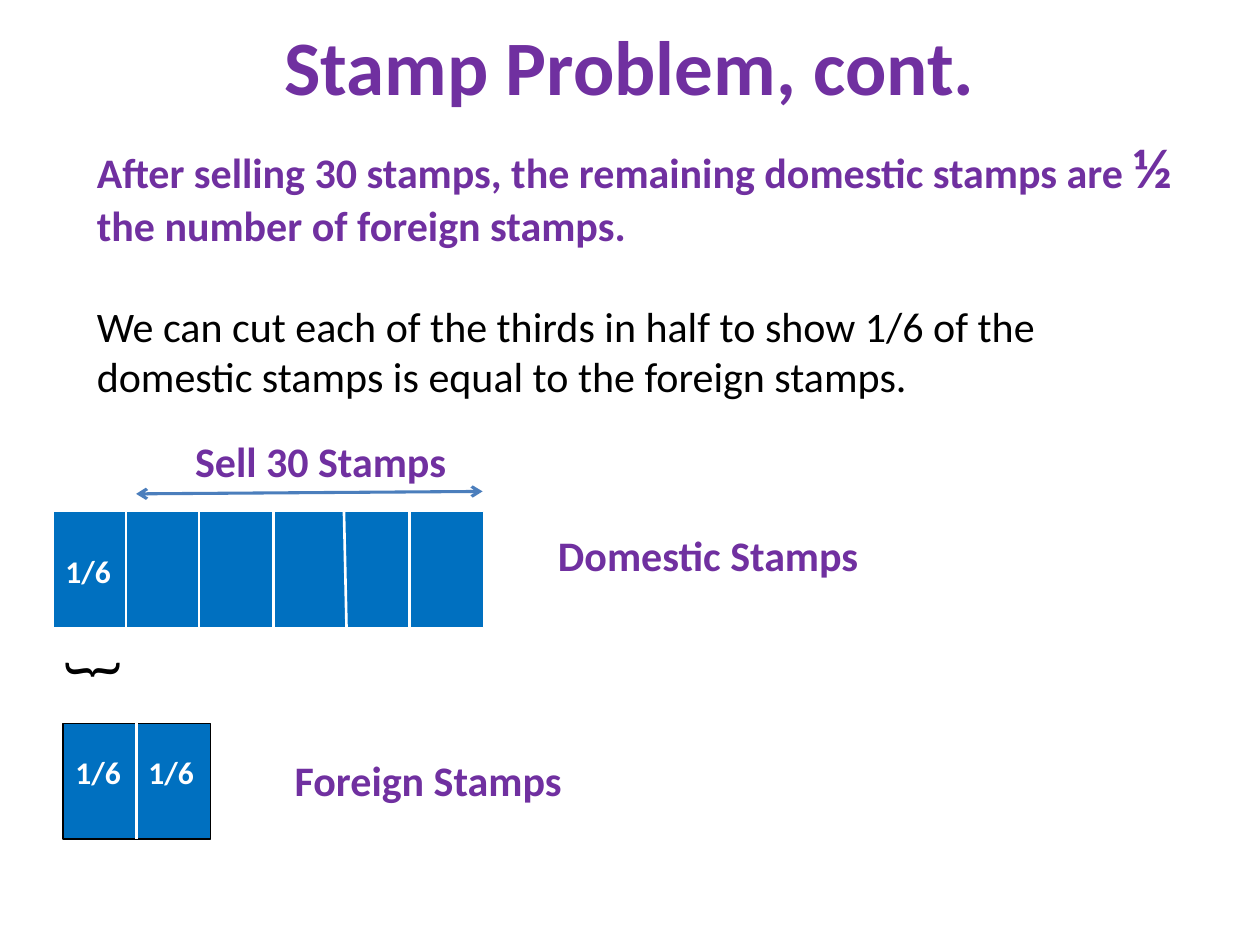
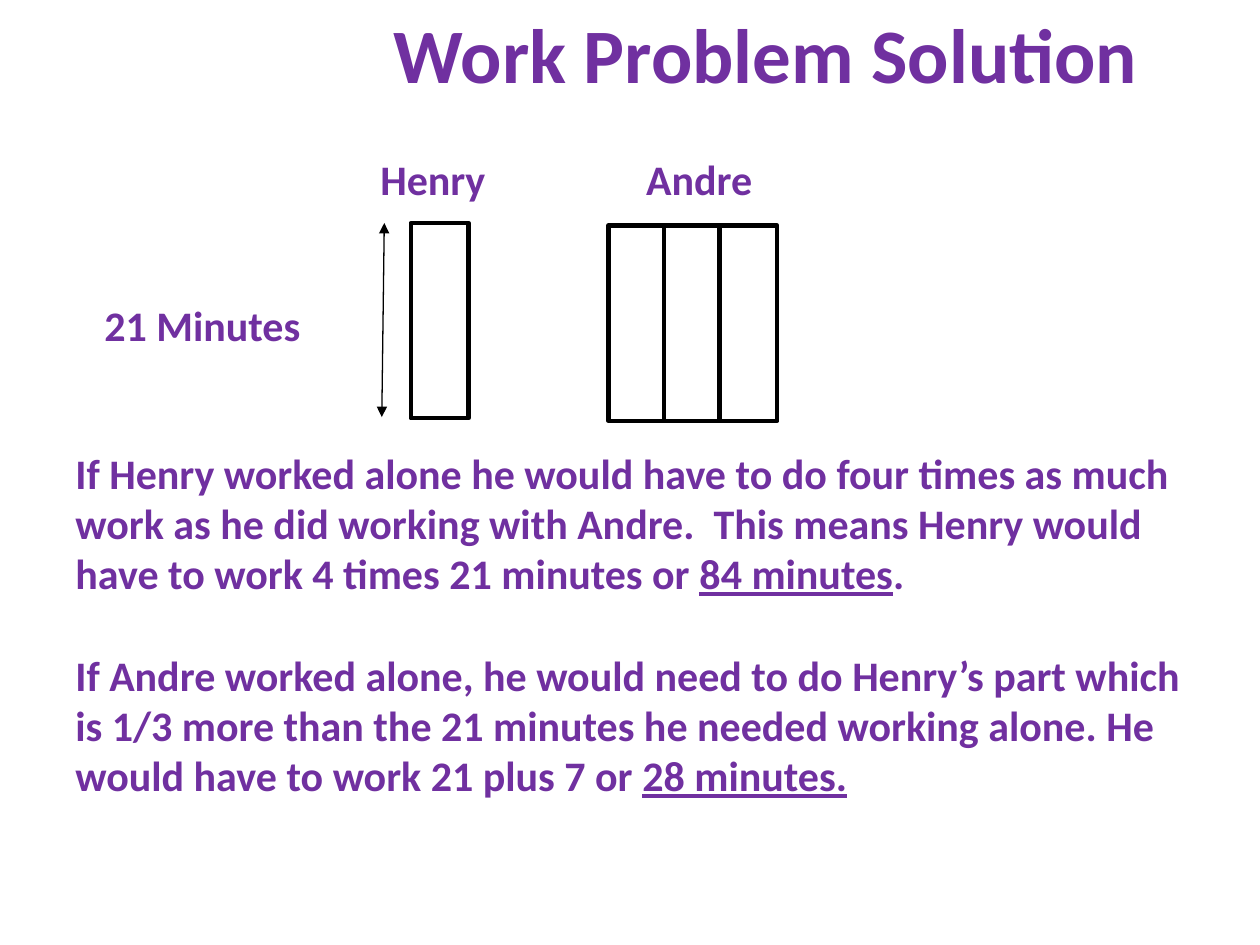
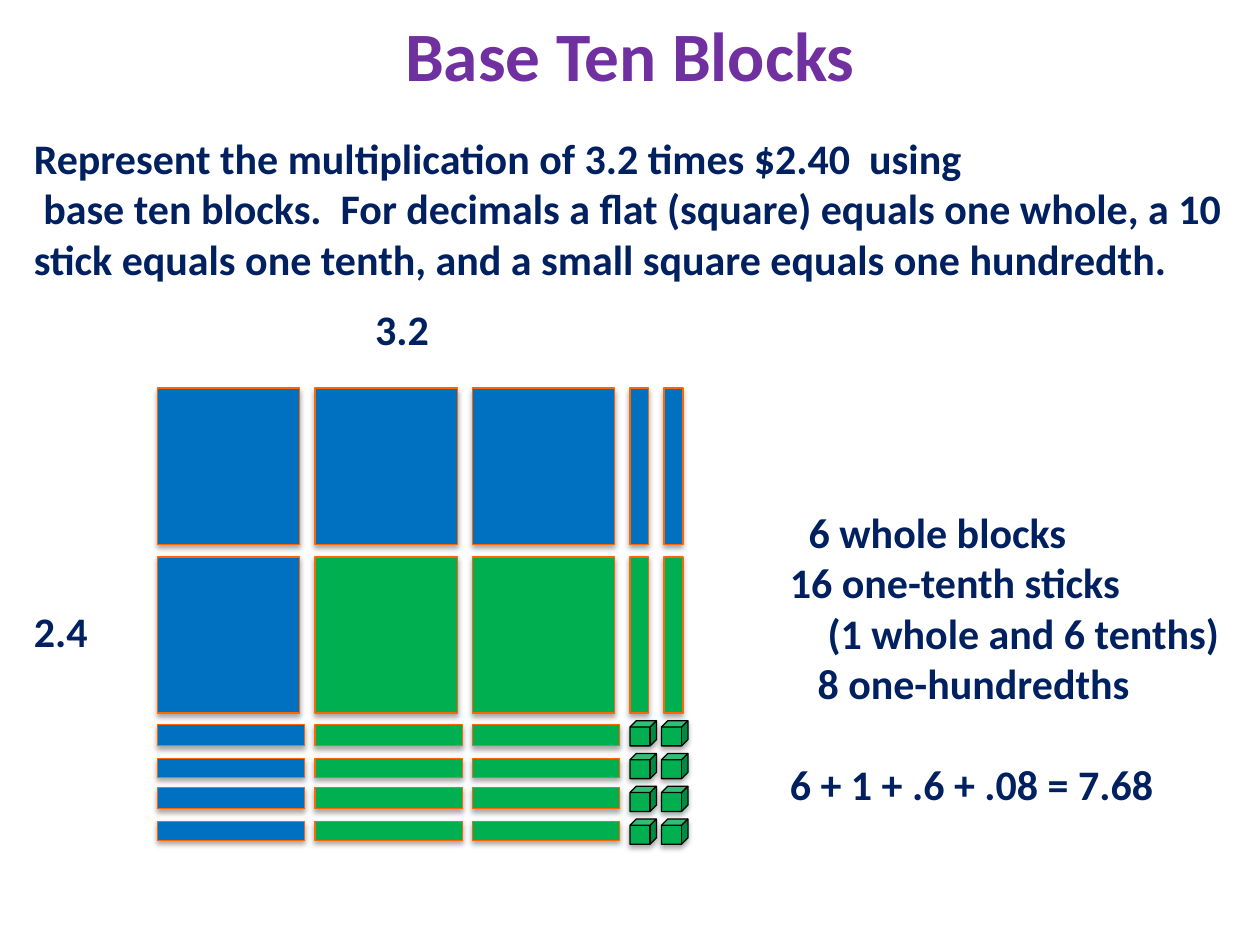
from dataclasses import dataclass

from lxml import etree
from pptx import Presentation
from pptx.dml.color import RGBColor
from pptx.enum.shapes import MSO_CONNECTOR, MSO_SHAPE
from pptx.enum.text import MSO_ANCHOR, PP_ALIGN
from pptx.oxml.ns import qn
from pptx.util import Inches, Pt

RECTANGLE = MSO_SHAPE.RECTANGLE
CUBE = MSO_SHAPE.CUBE
STRAIGHT = MSO_CONNECTOR.STRAIGHT
TOP = MSO_ANCHOR.TOP
MIDDLE = MSO_ANCHOR.MIDDLE
LEFT = PP_ALIGN.LEFT
CENTER = PP_ALIGN.CENTER
TOP_SIDE, BOTTOM_SIDE = 0, 2


@dataclass(frozen=True)
class Theme:
    font: str = "Calibri"
    purple: str = "7030A0"
    navy: str = "002060"
    blue: str = "0070C0"
    green: str = "00B050"
    orange: str = "FF6600"
    arrow_blue: str = "4B7EBC"
    black: str = "000000"
    white: str = "FFFFFF"
    title: float = 44
    small_title: float = 39.6
    brace: float = 36
    fraction: float = 32
    body: float = 24
    label: float = 18
    blank_line: float = 29


THEME = Theme()


def apply_format(target, values):
    for name, value in values.items():
        setattr(target, name, value)


class SlideBuilder:
    def __init__(self, deck, theme):
        self.deck = deck
        self.theme = theme
        self.page = None

    def new_page(self):
        self.page = self.deck.slides.add_slide(self.deck.slide_layouts[6])

    def title(self, words, at, size=THEME.title):
        self.text(at, [words], size=size, align=CENTER, anchor=MIDDLE)

    def text(self, at, paragraphs, size=THEME.body, color=THEME.purple, bold=True,
             align=LEFT, anchor=TOP, wrap=True, rotation=0, gaps=(), indents=()):
        box = self.page.shapes.add_textbox(*map(Inches, at))
        box.rotation = rotation
        frame = box.text_frame
        apply_format(frame, {"word_wrap": wrap, "vertical_anchor": anchor})
        for index, content in enumerate(paragraphs):
            para = frame.add_paragraph() if index else frame.paragraphs[0]
            para.alignment = align
            if index in gaps:
                para.space_before = Pt(self.theme.blank_line)
            if indents:
                para._p.get_or_add_pPr().set("marL", str(Inches(indents[index])))
            spans = [(content, {})] if isinstance(content, str) else content
            for words, changes in spans:
                self.span(para, words, {"size": size, "color": color, "bold": bold} | changes)

    def span(self, para, words, values):
        span = para.add_run()
        span.text = words
        values = dict(values)
        span.font.color.rgb = RGBColor.from_string(values.pop("color"))
        values["size"] = Pt(values["size"])
        apply_format(span.font, {"name": self.theme.font} | values)

    def block(self, at, fill, line, width=0.75, kind=RECTANGLE, shadow=False):
        shape = self.page.shapes.add_shape(kind, *map(Inches, at))
        shape.shadow.inherit = False
        shape.fill.solid()
        shape.fill.fore_color.rgb = RGBColor.from_string(fill)
        shape.line.color.rgb = RGBColor.from_string(line)
        shape.line.width = Pt(width)
        if shadow:
            self.cast_shadow(shape)
        return shape

    def cast_shadow(self, shape):
        effects = shape._element.spPr.find(qn("a:effectLst"))
        outer = etree.SubElement(effects, qn("a:outerShdw"), blurRad=str(Pt(3.1)),
                                 dist=str(Pt(1.8)), dir="5400000", rotWithShape="0")
        tint = etree.SubElement(outer, qn("a:srgbClr"), val=self.theme.black)
        etree.SubElement(tint, qn("a:alpha"), val="35000")

    def line(self, start, end, color, width, arrow=None):
        connector = self.page.shapes.add_connector(STRAIGHT, *map(Inches, (*start, *end)))
        connector.line.color.rgb = RGBColor.from_string(color)
        connector.line.width = Pt(width)
        if arrow:
            for tag in ("a:headEnd", "a:tailEnd"):
                etree.SubElement(connector.line._get_or_add_ln(), qn(tag), type=arrow)
        etree.SubElement(connector._element.spPr, qn("a:effectLst"))
        return connector


def build_stamp_page(builder):
    theme = builder.theme
    builder.new_page()
    builder.title("Stamp Problem, cont.", (0.5, 0, 9, 1.03))
    plain = {"color": theme.black, "bold": False}
    builder.text((0.67, 1, 8.75, 2.56), [
        [("After selling 30 stamps, the remaining domestic stamps are ", {}),
         ("½", {"size": theme.fraction}),
         (" the number of foreign stamps.", {})],
        [("We can cut each of the thirds in half to show 1/6 of the domestic stamps "
          "is equal to the foreign stamps.", plain)],
    ], gaps=(1,))

    foreign_bar = builder.block((0.5, 5.74, 1.17, 0.92), theme.blue, theme.black)
    builder.text((2.24, 5.94, 2.34, 0.81), ["Foreign Stamps"], wrap=False)
    builder.text((4.25, 4.15, 2.69, 0.81), ["Domestic Stamps"], indents=(0.08,))
    builder.text((1, 3.41, 2.83, 0.81), ["Sell 30 Stamps"], indents=(0.45,))
    builder.line((1.08, 3.92), (3.83, 3.9), theme.arrow_blue, 1.75, arrow="arrow")

    bar_top, bar_height = 4.06, 0.92
    builder.block((0.42, bar_top, 3.42, bar_height), theme.blue, theme.white)
    for upper, lower in ((1, 1), (1.58, 1.58), (2.17, 2.17), (2.73, 2.75), (3.25, 3.25)):
        builder.line((upper, bar_top), (lower, bar_top + bar_height), theme.white, 1.5)

    builder.text((0.48, 4.93, 0.42, 0.71), ["{"], size=theme.brace, color=theme.black,
                 bold=False, rotation=270)
    divider = builder.line((1.08, 5.74), (1.08, 6.66), theme.white, 1.75)
    divider.begin_connect(foreign_bar, TOP_SIDE)
    divider.end_connect(foreign_bar, BOTTOM_SIDE)
    for left, top in ((0.42, 4.33), (0.5, 5.93), (1.08, 5.93)):
        builder.text((left, top, 0.75, 0.4), ["1/6"], size=theme.label, color=theme.white)


def build_work_page(builder):
    theme = builder.theme
    builder.new_page()
    builder.title("Work Problem Solution", (1.58, 0, 9, 0.83))
    work_units = [(3.26, 1.77)] + [(4.83 + 0.44 * part, 1.79) for part in range(3)]
    for left, top in work_units:
        builder.block((left, top, 0.46, 1.55), theme.white, theme.black, width=2.5)
    builder.line((3.05, 1.77), (3.03, 3.31), theme.black, 0.75, arrow="triangle")
    for words, left, top, width in (("Henry", 2.92, 1.17, 1.3), ("Andre", 5.03, 1.17, 1.3),
                                    ("21 Minutes", 0.73, 2.33, 2)):
        builder.text((left, top, width, 0.5), [words])
    underlined = {"underline": True}
    builder.text((0.5, 3.5, 9, 2.93), [
        [("If Henry worked alone he would have to do four times as much work as he did "
          "working with Andre.  This means Henry would have to work 4 times 21 minutes or ", {}),
         ("84 minutes", underlined),
         (".", {})],
        [("If Andre worked alone, he would need to do Henry’s part which is 1/3 more than "
          "the 21 minutes he needed working alone. He would have to work 21 plus 7 or ", {}),
         ("28 minutes.", underlined)],
    ], gaps=(1,))


def build_blocks_page(builder):
    theme = builder.theme
    builder.new_page()
    builder.title("Base Ten Blocks", (0.5, 0.08, 9, 0.7), size=theme.small_title)
    builder.text((0.17, 1, 9.67, 1.31), [
        "Represent the multiplication of 3.2 times $2.40  using",
        " base ten blocks.  For decimals a flat (square) equals one whole, a 10 stick equals "
        "one tenth, and a small square equals one hundredth.",
    ], color=theme.navy)
    for words, left, top in (("3.2", 2.88, 2.36), ("2.4", 0.17, 4.76)):
        builder.text((left, top, 0.7, 0.5), [words], color=theme.navy)
    builder.text((6.17, 3.97, 3.8, 2.54), [
        "6 whole blocks",
        "16 one-tenth sticks",
        "(1 whole and 6 tenths)",
        "8 one-hundredths",
        "6 + 1 + .6 + .08 = 7.68",
    ], color=theme.navy, gaps=(4,), indents=(0.15, 0, 0.3, 0.22, 0))

    column_lefts = [1.25 + 1.25 * column for column in range(3)]
    for row, top in enumerate((3.08, 4.42)):
        for column, left in enumerate(column_lefts):
            fill = theme.green if row and column else theme.blue
            builder.block((left, top, 1.13, 1.24), fill, theme.orange, shadow=True)
        for left in (5, 5.27):
            fill = theme.green if row else theme.blue
            builder.block((left, top, 0.15, 1.24), fill, theme.orange, shadow=True)

    for top, height in ((5.75, 0.17), (6.02, 0.15), (6.25, 0.17), (6.52, 0.15)):
        for column, left in enumerate(column_lefts):
            fill = theme.green if column else theme.blue
            builder.block((left, top, 1.17, height), fill, theme.orange, shadow=True)
    for row in range(4):
        for left in (5, 5.25):
            builder.block((left, 5.72 + 0.26 * row, 0.21, 0.2), theme.green, theme.black,
                          kind=CUBE, shadow=True)


def main():
    deck = Presentation()
    apply_format(deck, {"slide_width": Inches(10), "slide_height": Inches(7.5)})
    builder = SlideBuilder(deck, THEME)
    for build_page in (build_stamp_page, build_work_page, build_blocks_page):
        build_page(builder)
    deck.save("out.pptx")


if __name__ == "__main__":
    main()
